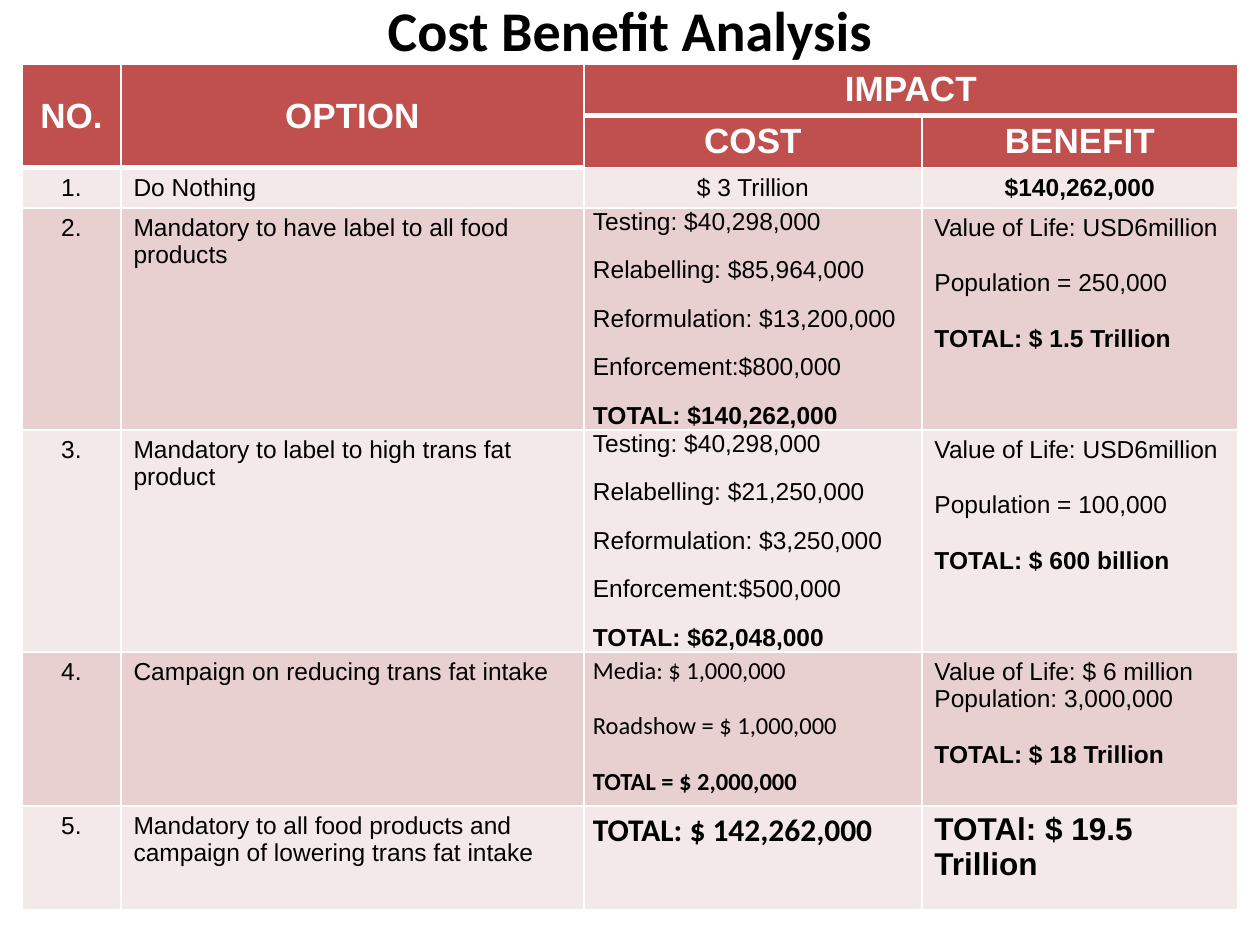
from dataclasses import dataclass

from lxml.etree import SubElement
from pptx import Presentation
from pptx.dml.color import RGBColor
from pptx.enum.text import MSO_ANCHOR, PP_ALIGN
from pptx.oxml.ns import qn
from pptx.util import Emu, Pt

WHITE = RGBColor(0xFF, 0xFF, 0xFF)
BLACK = RGBColor(0, 0, 0)
RED = RGBColor(0xC0, 0x50, 0x4D)
PALE = RGBColor(0xF4, 0xE9, 0xE9)
PINK = RGBColor(0xE8, 0xD0, 0xD0)

COLS = [99, 463, 338, 316]
ROWS = [51, 52, 40, 222, 222, 154, 104]


def px(n: int) -> Emu:
    return Emu(round(n * 914400 / 126))


@dataclass(frozen=True)
class Style:
    size: int = 14
    font: str = "Arial"
    color: RGBColor = BLACK
    bold: bool = False
    align: PP_ALIGN = PP_ALIGN.LEFT
    gap: int = 0
    leading: float = 1.0
    tight: bool = False


@dataclass(frozen=True)
class Option:
    name: str
    cost: list[str]
    gain: list[str]
    cost_style: Style
    gain_style: Style


HEAD = Style(20, color=WHITE, bold=True, align=PP_ALIGN.CENTER)
MID = Style(align=PP_ALIGN.CENTER)
COST = Style(gap=12, tight=True)
MEDIA = Style(font="Calibri", gap=12, leading=1.15, tight=True)
GAIN = Style(gap=16)

OPTIONS = [
    Option("Do Nothing", ["$ 3 Trillion"], ["$140,262,000"],
           MID, Style(bold=True, align=PP_ALIGN.CENTER)),
    Option("Mandatory to have label to all food products",
           ["Testing: $40,298,000", "Relabelling: $85,964,000",
            "Reformulation: $13,200,000", "Enforcement:$800,000",
            "TOTAL: $140,262,000"],
           ["Value of Life: USD6million", "Population = 250,000",
            "TOTAL: $ 1.5 Trillion"], COST, GAIN),
    Option("Mandatory to label to high trans fat product",
           ["Testing: $40,298,000", "Relabelling: $21,250,000",
            "Reformulation: $3,250,000", "Enforcement:$500,000",
            "TOTAL: $62,048,000"],
           ["Value of Life: USD6million", "Population = 100,000",
            "TOTAL: $ 600 billion"], COST, GAIN),
    Option("Campaign on reducing trans fat intake",
           ["Media: $ 1,000,000", "Roadshow = $ 1,000,000",
            "TOTAL = $ 2,000,000"],
           ["Value of Life: $ 6 million", "Population: 3,000,000",
            "TOTAL: $ 18 Trillion"], MEDIA, GAIN),
    Option("Mandatory to all food products and campaign of lowering "
           "trans fat intake",
           ["TOTAL: $ 142,262,000"], ["TOTAl: $ 19.5 Trillion"],
           Style(18, "Calibri", leading=1.15, tight=True), Style(18)),
]


def write(frame, lines: list[str], style: Style) -> None:
    """Fill a text frame, with total lines in bold."""
    frame.text = "\n".join(lines)
    for i, para in enumerate(frame.paragraphs):
        para.alignment = style.align
        para.line_spacing = style.leading
        if i and style.gap:
            # Population follows directly when it is written with a colon.
            close = para.text.startswith("Population:")
            para.space_before = Pt(0 if close else style.gap)
        for run in para.runs:
            font = run.font
            font.name = style.font
            font.size = Pt(style.size)
            font.bold = style.bold or run.text.upper().startswith("TOTAL")
            font.color.rgb = style.color


def paint(cell, fill: RGBColor, base: float = 1) -> None:
    """Draw white cell borders, the lower one base points wide, and fill."""
    props = cell._tc.get_or_add_tcPr()
    for tag, width in (("lnL", 1), ("lnR", 1), ("lnT", 1), ("lnB", base)):
        line = SubElement(props, qn(f"a:{tag}"), w=str(Pt(width)))
        SubElement(SubElement(line, qn("a:solidFill")),
                   qn("a:srgbClr"), val=str(WHITE))
    cell.fill.solid()
    cell.fill.fore_color.rgb = fill


def fill_cell(cell, lines: list[str], style: Style) -> None:
    write(cell.text_frame, lines, style)
    if style.tight:
        cell.margin_left = cell.margin_right = px(9)
        cell.margin_top = cell.margin_bottom = 0


def add_title(slide) -> None:
    title = slide.shapes.title
    title.left, title.top = px(63), px(-5)
    title.width, title.height = px(1134), px(68)
    title.text_frame.vertical_anchor = MSO_ANCHOR.MIDDLE
    write(title.text_frame, ["Cost Benefit Analysis"],
          Style(32, "Calibri", bold=True, align=PP_ALIGN.CENTER))


def add_grid(slide) -> None:
    table = slide.shapes.add_table(
        len(ROWS), len(COLS), px(22), px(64),
        px(sum(COLS)), px(sum(ROWS))).table
    table.first_row = table.horz_banding = False
    for col, width in zip(table.columns, COLS):
        col.width = px(width)
    for row, height in zip(table.rows, ROWS):
        row.height = px(height)

    for r in range(len(ROWS)):
        fill = RED if r < 2 else (PALE, PINK)[r % 2]
        for c in range(len(COLS)):
            thick = r == 0 or (r == 1 and c < 2)
            paint(table.cell(r, c), fill, 3 if thick else 1)

    for c in (0, 1):
        table.cell(0, c).merge(table.cell(1, c))
        table.cell(0, c).vertical_anchor = MSO_ANCHOR.MIDDLE
    table.cell(0, 2).merge(table.cell(0, 3))
    heads = {(0, 0): "NO.", (0, 1): "OPTION", (0, 2): "IMPACT",
             (1, 2): "COST", (1, 3): "BENEFIT"}
    for (r, c), text in heads.items():
        fill_cell(table.cell(r, c), [text], HEAD)

    for i, opt in enumerate(OPTIONS, 1):
        parts = [([f"{i}."], MID), ([opt.name], Style()),
                 (opt.cost, opt.cost_style), (opt.gain, opt.gain_style)]
        for c, (lines, style) in enumerate(parts):
            fill_cell(table.cell(i + 1, c), lines, style)


def main() -> None:
    deck = Presentation()
    deck.slide_width, deck.slide_height = px(1260), px(945)
    slide = deck.slides.add_slide(deck.slide_layouts[5])
    add_title(slide)
    add_grid(slide)
    deck.save("out.pptx")


if __name__ == "__main__":
    main()
